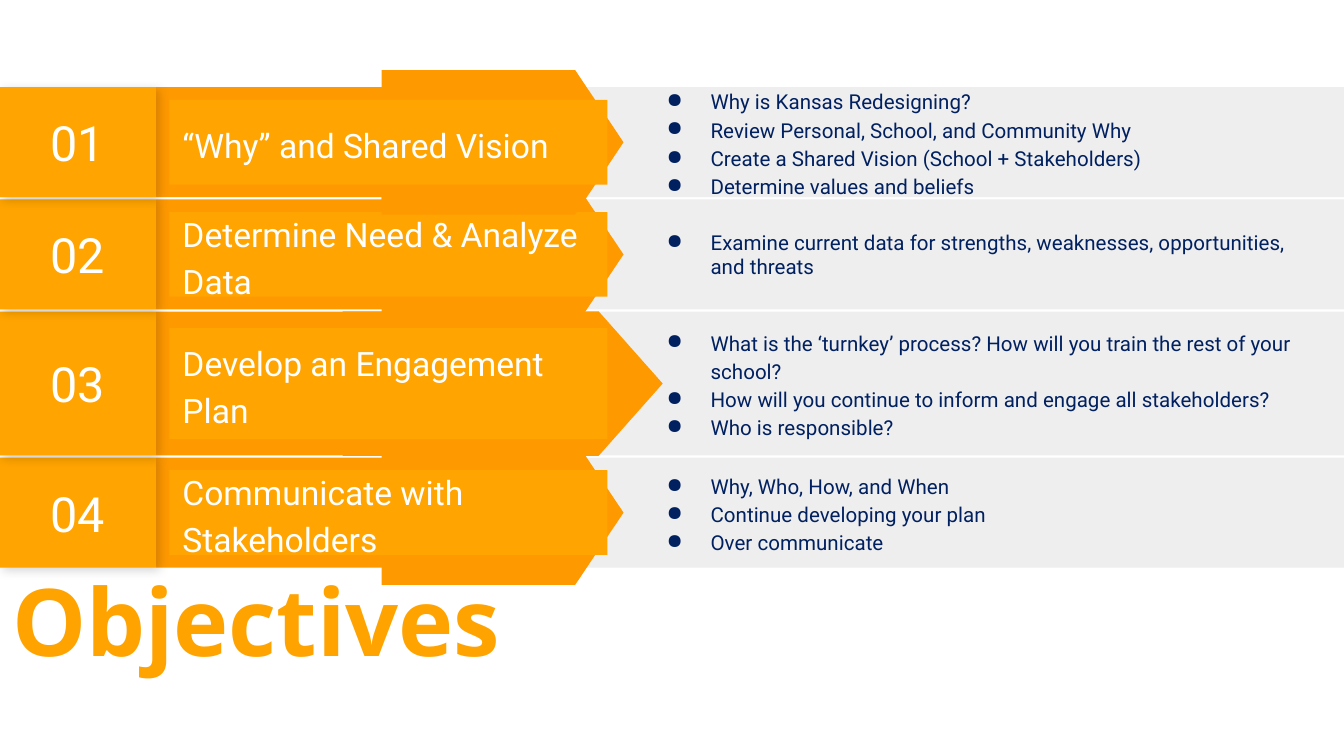
"""Build the Objectives slide: four numbered steps with arrows and bullet notes."""
from lxml.etree import SubElement
from pptx import Presentation
from pptx.dml.color import RGBColor
from pptx.enum.shapes import MSO_SHAPE
from pptx.enum.text import MSO_ANCHOR, PP_ALIGN
from pptx.oxml import parse_xml
from pptx.oxml.ns import nsdecls, qn
from pptx.util import Cm, Pt

TITLE = "Objectives"
STEPS = [
    {"label": "“Why” and Shared Vision", "height": 2.08, "arrow": 4.57,
     "notes_width": 12.67, "spacing": 1.15,
     "notes": ["Why is Kansas Redesigning?",
               "Review Personal, School, and Community Why",
               "Create a Shared Vision (School + Stakeholders)",
               "Determine values and beliefs"]},
    {"label": "Determine Need & Analyze Data", "height": 2.08, "arrow": 4.57,
     "notes_width": 12.67, "spacing": 1.0,
     "notes": ["Examine current data for strengths, weaknesses, opportunities, and threats"]},
    {"label": "Develop an Engagement Plan", "height": 2.72, "arrow": 6.05,
     "notes_width": 13.49, "spacing": 1.15,
     "notes": ["What is the ‘turnkey’ process? How will you train the rest of your school?",
               "How will you continue to inform and engage all stakeholders?",
               "Who is responsible?"]},
    {"label": "Communicate with Stakeholders", "height": 2.08, "arrow": 4.57,
     "notes_width": 12.67, "spacing": 1.15,
     "notes": ["Why, Who, How, and When",
               "Continue developing your plan",
               "Over communicate"]},
]
COLORS = {"amber": "FFA400", "orange": "FF9900", "title": "FFA300",
          "gray": "EEEEEE", "navy": "002060", "white": "FFFFFF"}
PAGE_WIDTH, PAGE_HEIGHT = 25.4, 14.29
FIRST_TOP, GAP = 1.65, 0.04
NUMBER_WIDTH = 2.95
ARROW_CENTER, ARROW_THICKNESS = 9.5, 2.73
LABEL_SHARE = 0.77


def color(name):
    return RGBColor.from_string(COLORS[name])


def add_block(shapes, kind, left, top, width, height, fill):
    block = shapes.add_shape(kind, Cm(left), Cm(top), Cm(width), Cm(height))
    block.shadow.inherit = False
    block.fill.solid()
    block.fill.fore_color.rgb = color(fill)
    block.line.fill.background()
    return block


def write(box, lines, font, size, ink, spacing=1.0, align=PP_ALIGN.LEFT,
          bullets=False, bold=False, margins=(0.25, 0.25)):
    frame = box.text_frame
    frame.word_wrap = True
    frame.vertical_anchor = MSO_ANCHOR.MIDDLE
    frame.margin_left = frame.margin_right = Cm(margins[0])
    frame.margin_top = frame.margin_bottom = Cm(margins[1])
    for index, line in enumerate(lines):
        paragraph = frame.paragraphs[0] if index == 0 else frame.add_paragraph()
        paragraph.text = line
        paragraph.alignment = align
        paragraph.line_spacing = spacing
        if bullets:
            add_bullet(paragraph, ink)
        paragraph.font.name = font
        paragraph.font.size = Pt(size)
        paragraph.font.bold = bold
        paragraph.font.color.rgb = color(ink)


def add_bullet(paragraph, ink):
    properties = paragraph._p.get_or_add_pPr()
    properties.set("marL", str(Cm(1.27)))
    properties.set("indent", str(Cm(-0.83)))
    bullet_color = SubElement(properties, qn("a:buClr"))
    SubElement(bullet_color, qn("a:srgbClr"), val=COLORS[ink])
    SubElement(properties, qn("a:buChar"), char="●")


def add_soft_shadow(block):
    properties = block._element.spPr
    properties.remove(properties.find(qn("a:effectLst")))
    properties.append(parse_xml(
        f'<a:effectLst {nsdecls("a")}>'
        f'<a:outerShdw blurRad="{Pt(5.6)}" dist="{Pt(2.2)}" dir="2700000" algn="tl" rotWithShape="0">'
        '<a:srgbClr val="000000"><a:alpha val="17000"/></a:srgbClr>'
        '</a:outerShdw></a:effectLst>'))


def add_step(page, number, top, step):
    shapes = page.shapes.add_group_shape().shapes
    height, length = step["height"], step["arrow"]
    middle = top + height / 2
    rectangle = MSO_SHAPE.RECTANGLE

    add_block(shapes, rectangle, 9.09, top, PAGE_WIDTH - 9.09, height, "gray")
    add_block(shapes, rectangle, NUMBER_WIDTH, top, 7.87, height, "orange")
    arrow = add_block(shapes, MSO_SHAPE.FLOWCHART_OFFPAGE_CONNECTOR,
                      ARROW_CENTER - ARROW_THICKNESS / 2, middle - length / 2,
                      ARROW_THICKNESS, length, "orange")
    arrow.rotation = 270

    label_height = height * LABEL_SHARE
    label = add_block(shapes, rectangle, 3.2, middle - label_height / 2,
                      8.28, label_height, "amber")
    write(label, [step["label"]], "Roboto", 18, "white", spacing=1.15)

    badge = add_block(shapes, rectangle, 0, top, NUMBER_WIDTH, height, "amber")
    add_soft_shadow(badge)
    write(badge, [f"{number:02d}"], "Roboto", 26, "white", align=PP_ALIGN.CENTER)

    notes = shapes.add_textbox(Cm(11.91), Cm(top), Cm(step["notes_width"]), Cm(height))
    write(notes, step["notes"], "Roboto", 11, "navy",
          spacing=step["spacing"], bullets=True)


def main():
    deck = Presentation()
    deck.slide_width, deck.slide_height = Cm(PAGE_WIDTH), Cm(PAGE_HEIGHT)
    page = deck.slides.add_slide(deck.slide_layouts[6])

    title = page.shapes.add_textbox(Cm(0.05), Cm(10.9), Cm(21.08), Cm(1.88))
    write(title, [TITLE], "Open Sans", 50, "title", spacing=0.9, bold=True,
          margins=(0.18, 0.1))

    tops = [FIRST_TOP + sum(step["height"] + GAP for step in STEPS[:index])
            for index in range(len(STEPS))]
    for index in reversed(range(len(STEPS))):
        add_step(page, index + 1, tops[index], STEPS[index])

    deck.save("out.pptx")


if __name__ == "__main__":
    main()
